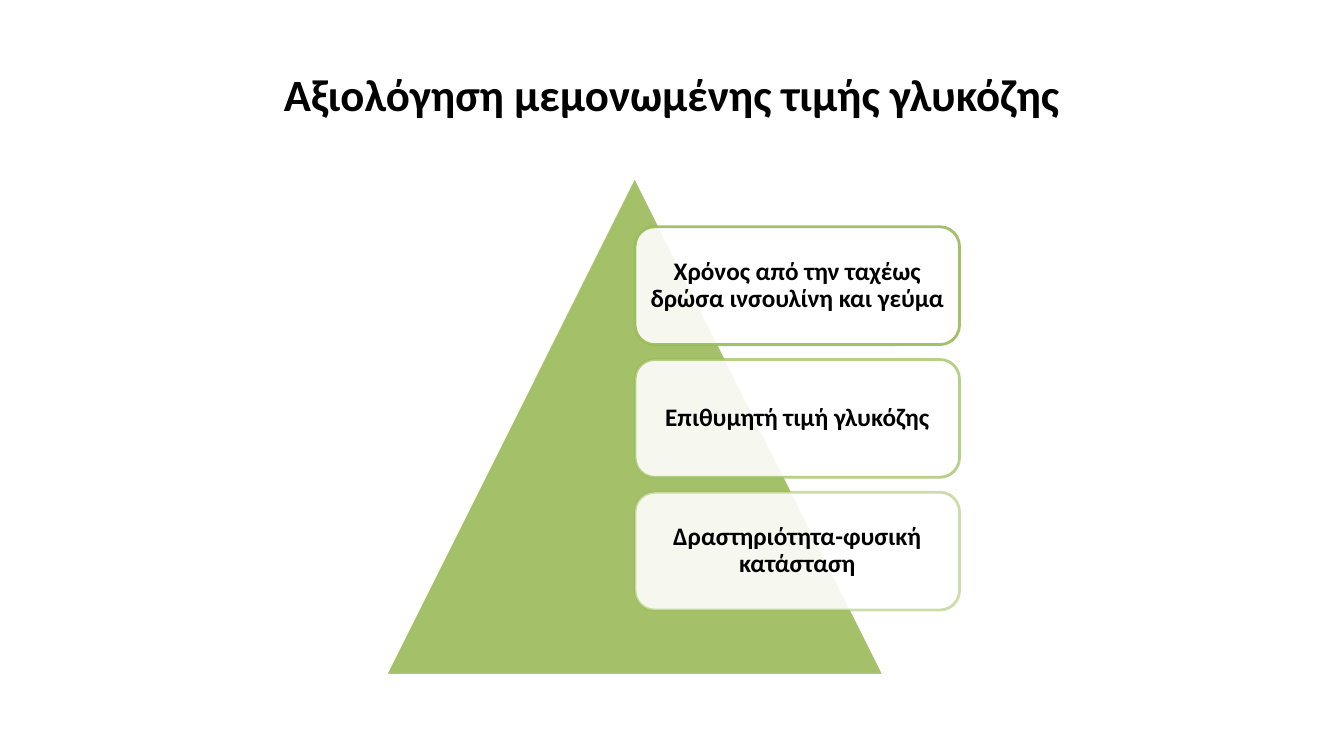
from pptx import Presentation
from pptx.dml.color import RGBColor
from pptx.enum.shapes import MSO_SHAPE
from pptx.enum.text import MSO_ANCHOR, PP_ALIGN
from pptx.oxml.ns import qn
from pptx.util import Pt

TRIANGLE = MSO_SHAPE.ISOSCELES_TRIANGLE
ROUNDED = MSO_SHAPE.ROUNDED_RECTANGLE
MIDDLE = MSO_ANCHOR.MIDDLE
CENTER = PP_ALIGN.CENTER

FONT = "Calibri"
GREEN, WHITE, BLACK = "9BBB59", "FFFFFF", "000000"
TITLE = "Αξιολόγηση μεμονωμένης τιμής γλυκόζης"
# Card text and opacity of its border in percent
FACTORS = [
    ("Χρόνος από την ταχέως δρώσα ινσουλίνη και γεύμα", 90),
    ("Επιθυμητή τιμή γλυκόζης", 70),
    ("Δραστηριότητα-φυσική κατάσταση", 50),
]
CARD_LEFT, CARD_TOP, CARD_WIDTH, CARD_HEIGHT = 453.6, 162, 231.8, 84.2
CARD_STEP = 94.8


def paint(color_format, color):
    color_format.rgb = RGBColor.from_string(color)


def set_opacity(sp, percents):
    """Set the opacity of the fill and, if given, of the line."""
    colors = sp._element.spPr.iter(qn("a:srgbClr"))
    for color, percent in zip(colors, percents):
        alpha = color.makeelement(qn("a:alpha"), {"val": str(percent * 1000)})
        color.append(alpha)


def add_shape(shapes, kind, left, top, width, height, fill, line, opacity):
    sp = shapes.add_shape(kind, Pt(left), Pt(top), Pt(width), Pt(height))
    sp.shadow.inherit = False
    sp.fill.solid()
    paint(sp.fill.fore_color, fill)
    paint(sp.line.color, line)
    sp.line.width = Pt(2)
    set_opacity(sp, opacity)
    return sp


def write(sp, text, size):
    tf = sp.text_frame
    tf.word_wrap = True
    tf.vertical_anchor = MIDDLE
    p = tf.paragraphs[0]
    p.text = text
    p.alignment = CENTER
    p.font.name = FONT
    p.font.size = Pt(size)
    p.font.bold = True
    paint(p.font.color, BLACK)
    return tf


def add_title(slide):
    sp = slide.shapes.title
    sp.left, sp.top, sp.width, sp.height = Pt(48), Pt(21.6), Pt(864), Pt(90)
    write(sp, TITLE, 32)


def add_card(shapes, index, text, line_opacity):
    sp = add_shape(shapes, ROUNDED, CARD_LEFT, CARD_TOP + index * CARD_STEP,
                   CARD_WIDTH, CARD_HEIGHT, WHITE, GREEN, (90, line_opacity))
    tf = write(sp, text, 18)
    tf.margin_left = tf.margin_right = Pt(5)
    tf.margin_top = tf.margin_bottom = Pt(5)
    tf.paragraphs[0].line_spacing = 0.9


def main():
    prs = Presentation()
    prs.slide_width, prs.slide_height = Pt(960), Pt(540)
    slide = prs.slides.add_slide(prs.slide_layouts[5])
    add_title(slide)
    pyramid = slide.shapes.add_group_shape().shapes
    add_shape(pyramid, TRIANGLE, 275.2, 126, 356.4, 356.4, GREEN, WHITE, (90,))
    for index, (text, line_opacity) in enumerate(FACTORS):
        add_card(pyramid, index, text, line_opacity)
    prs.save("out.pptx")


if __name__ == "__main__":
    main()
